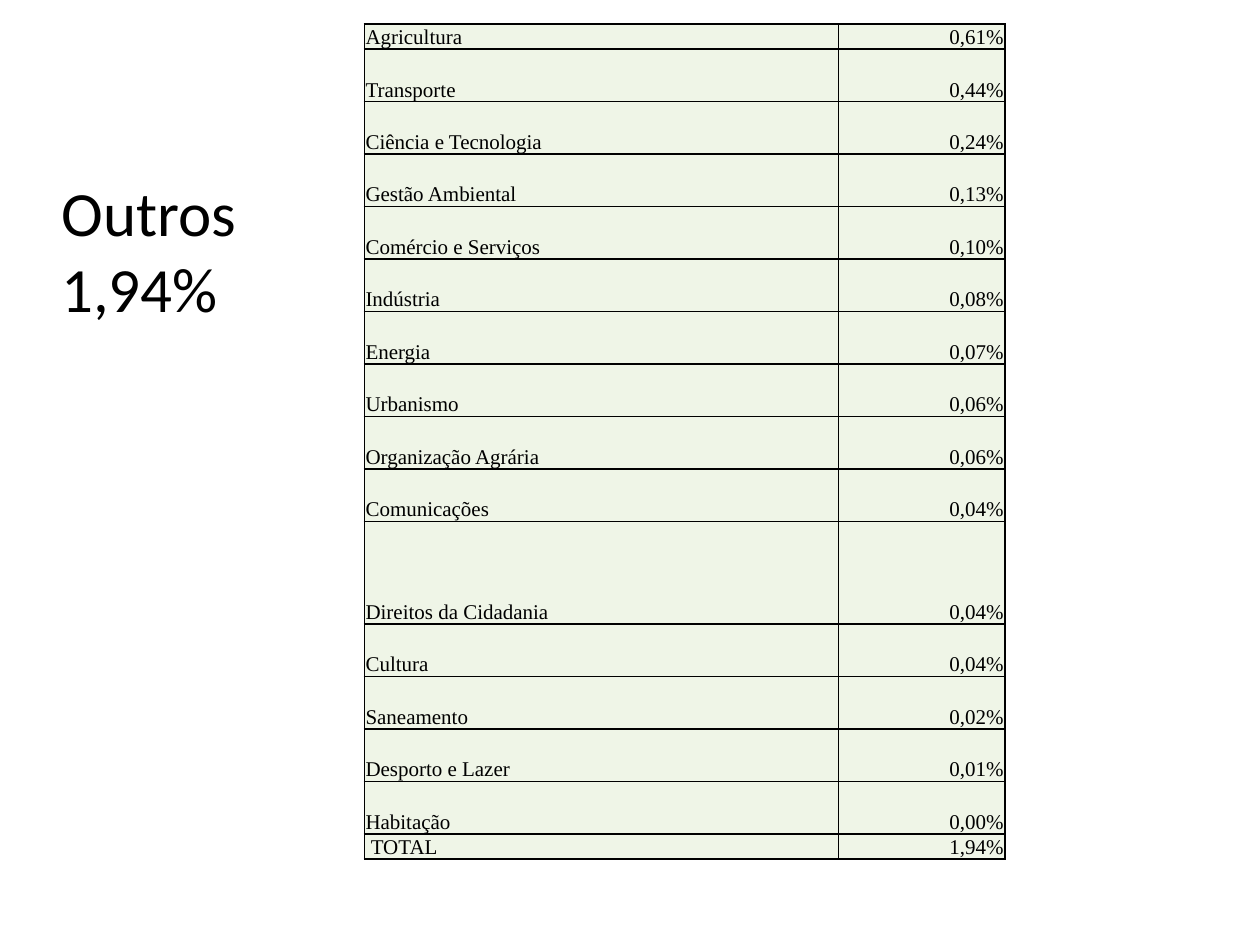
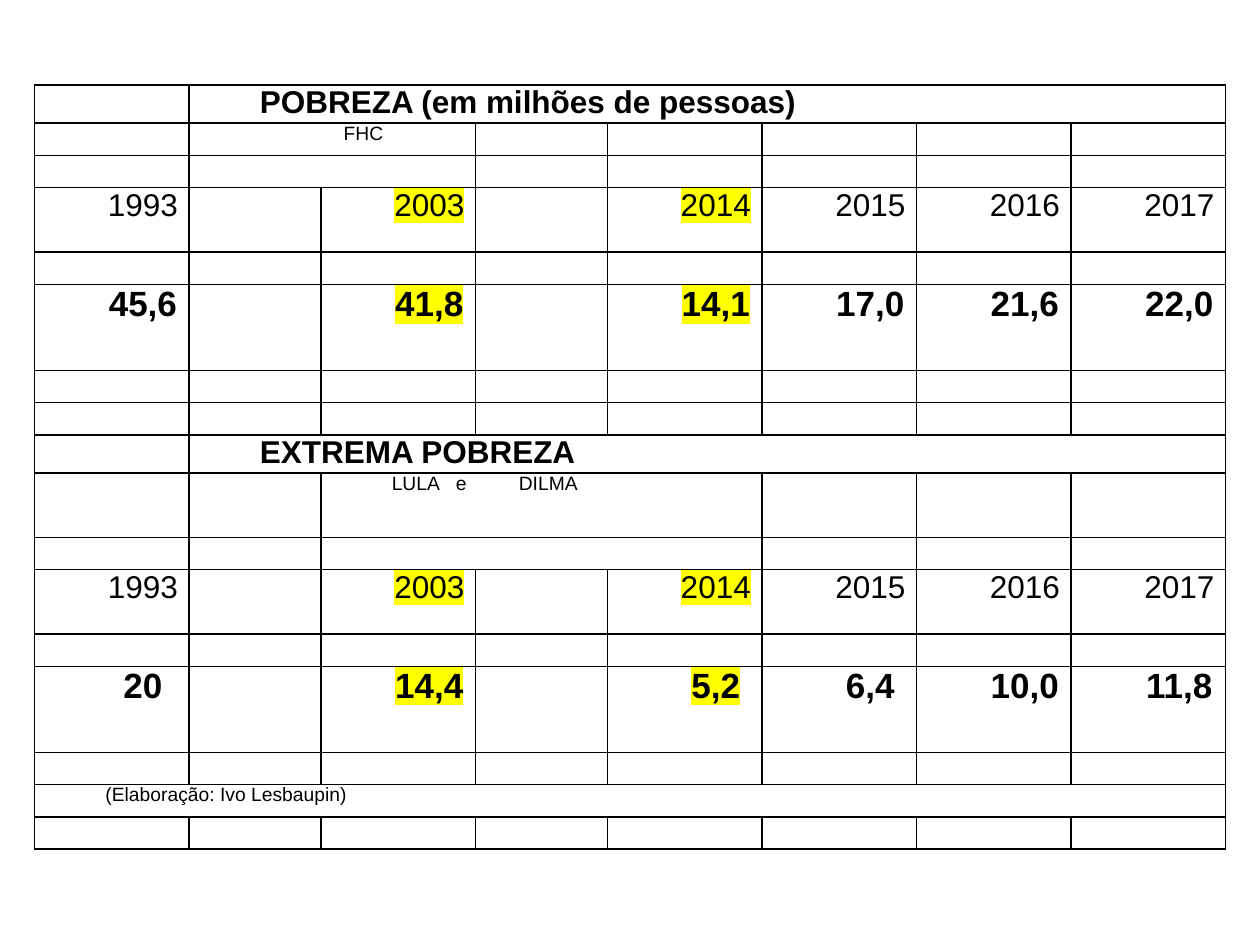
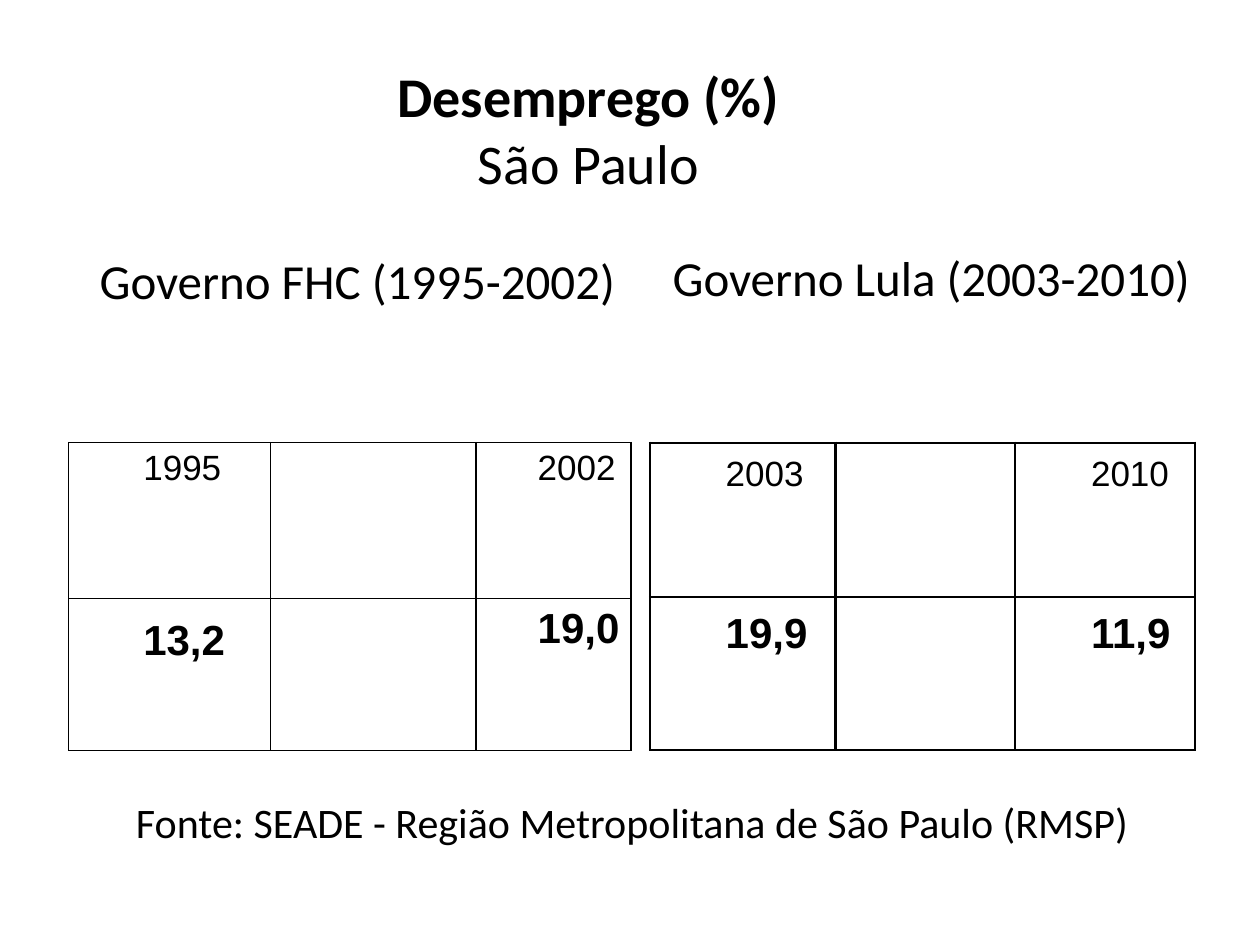
from lxml.etree import SubElement
from pptx import Presentation
from pptx.dml.color import RGBColor
from pptx.enum.text import MSO_ANCHOR as ANCHOR, PP_ALIGN as ALIGN
from pptx.oxml import parse_xml
from pptx.oxml.ns import nsdecls, qn
from pptx.util import Pt

BLACK, YELLOW, PALE_GREEN = "000000", "FFFF00", "EFF5E7"
CELL_INDENT = 35.4

OTHER_SPENDING = [
    ("Agricultura", "0,61%"), ("Transporte", "0,44%"),
    ("Ciência e Tecnologia", "0,24%"), ("Gestão Ambiental", "0,13%"),
    ("Comércio e Serviços", "0,10%"), ("Indústria", "0,08%"),
    ("Energia", "0,07%"), ("Urbanismo", "0,06%"),
    ("Organização Agrária", "0,06%"), ("Comunicações", "0,04%"),
    ("Direitos da Cidadania", "0,04%"), ("Cultura", "0,04%"),
    ("Saneamento", "0,02%"), ("Desporto e Lazer", "0,01%"),
    ("Habitação", "0,00%"), ("TOTAL", "1,94%"),
]

VALUE_COLUMNS = (0, 2, 4, 5, 6, 7)
HIGHLIGHT_COLUMNS = (2, 4)
YEARS = ("1993", "2003", "2014", "2015", "2016", "2017")
POVERTY = ("45,6", "41,8", "14,1", "17,0", "21,6", "22,0")
EXTREME_POVERTY = ("20", "14,4", "5,2", "6,4", "10,0", "11,8")


def color(value):
    return RGBColor.from_string(value)


def write(frame, text, size=18, font="Arial", bold=False, align=ALIGN.LEFT,
          indent=0, before=0, after=0, spacing=None, highlight=None, tabs=()):
    """Add one paragraph; an empty text only sets the line height."""
    para = frame.add_paragraph() if frame.text else frame.paragraphs[0]
    para.alignment = align
    para.space_before, para.space_after = Pt(before), Pt(after)
    if spacing:
        para.line_spacing = spacing
    props = para._p.get_or_add_pPr()
    props.set("marL", "0")
    props.set("indent", str(Pt(indent)))
    if tabs:
        stops = SubElement(props, qn("a:tabLst"))
        for stop in tabs:
            SubElement(stops, qn("a:tab"), pos=str(Pt(stop)), algn="l")
    if not text:
        SubElement(para._p, qn("a:endParaRPr"), sz=str(size * 100))
        return
    span = para.add_run()
    span.text = text
    span.font.size, span.font.bold = Pt(size), bold
    span.font.color.rgb = color(BLACK)
    span.font.name = font
    if highlight:
        fill = span._r.rPr.find(qn("a:solidFill"))
        fill.addnext(parse_xml(f'<a:highlight {nsdecls("a")}>'
                               f'<a:srgbClr val="{highlight}"/></a:highlight>'))


def add_text_box(page, left, top, width, height):
    box = page.shapes.add_textbox(Pt(left), Pt(top), Pt(width), Pt(height))
    box.text_frame.word_wrap = True
    return box.text_frame


def set_insets(cell, left, top):
    cell.margin_left = cell.margin_right = Pt(left)
    cell.margin_top = cell.margin_bottom = Pt(top)


def set_borders(cell, width):
    props = cell._tc.get_or_add_tcPr()
    for position, side in enumerate(("lnL", "lnR", "lnT", "lnB")):
        props.insert(position, parse_xml(
            f'<a:{side} {nsdecls("a")} w="{Pt(width)}"><a:solidFill>'
            f'<a:srgbClr val="{BLACK}"/></a:solidFill></a:{side}>'))


def add_grid(page, left, top, widths, heights, line=1, fill=None, insets=(5, 0)):
    table = page.shapes.add_table(
        len(heights), len(widths), Pt(left), Pt(top),
        Pt(sum(widths)), Pt(sum(heights))).table
    table.first_row = table.horz_banding = False
    for column, width in zip(table.columns, widths):
        column.width = Pt(width)
    for row, height in zip(table.rows, heights):
        row.height = Pt(height)
    for cell in table.iter_cells():
        if fill:
            cell.fill.solid()
            cell.fill.fore_color.rgb = color(fill)
        else:
            cell.fill.background()
        set_borders(cell, line)
        set_insets(cell, *insets)
    return table


def build_spending(page):
    low, normal, tall = 14.3, 30, 58.6
    heights = [low] + [normal] * 9 + [tall] + [normal] * 4 + [low]
    table = add_grid(page, 208.2, 13.8, (271, 95), heights,
                     fill=PALE_GREEN, insets=(0.7, 0))
    for row, entry in enumerate(OTHER_SPENDING):
        for column, text in enumerate(entry):
            cell = table.cell(row, column)
            cell.vertical_anchor = ANCHOR.BOTTOM
            cell.margin_top = Pt(0.7)
            write(cell.text_frame, text, size=12, font="Times New Roman",
                  align=ALIGN.RIGHT if column else ALIGN.LEFT,
                  indent=3 if text == "TOTAL" else 0)
    frame = add_text_box(page, 28, 95.8, 163.4, 138)
    for text in ("Outros", "1,94%"):
        write(frame, text, size=36, font="Calibri")


def build_poverty(page):
    wide, narrow = 88.3, 75.4
    low, heading, normal, tall = 18.45, 21.7, 36.9, 49.1
    widths = (wide, narrow, wide, narrow) + (wide,) * 4
    heights = (heading, low, low, normal, low, tall, low, low,
               heading, normal, low, normal, low, tall, low, low, low)
    table = add_grid(page, 19.8, 48.7, widths, heights)

    # Row, column, span, text and format of each cell that is merged
    small, title = {"size": 11}, {"size": 18, "bold": True}
    merged = [
        (0, 1, 7, "POBREZA (em milhões de pessoas)", title),
        (1, 1, 2, "FHC", {"size": 11, "align": ALIGN.CENTER}),
        (2, 1, 2, "", small),
        (8, 1, 7, "EXTREMA POBREZA", title),
        (9, 2, 3, "LULA\te\tDILMA", {"size": 11, "tabs": (86.9, 108)}),
        (10, 2, 3, "", small),
        (15, 0, 8, "(Elaboração: Ivo Lesbaupin)", small),
    ]
    content = {}
    for row, column, span, text, style in merged:
        table.cell(row, column).merge(table.cell(row, column + span - 1))
        content[row, column] = text, {"align": ALIGN.JUSTIFY, **style}

    years, numbers = {"size": 18}, {"size": 20, "bold": True}
    for row, values, style in ((3, YEARS, years), (5, POVERTY, numbers),
                               (11, YEARS, years), (13, EXTREME_POVERTY, numbers)):
        for column, text in zip(VALUE_COLUMNS, values):
            mark = YELLOW if column in HIGHLIGHT_COLUMNS else None
            content[row, column] = text, {"align": ALIGN.CENTER,
                                          "highlight": mark, **style}

    for row in range(len(heights)):
        for column in range(len(widths)):
            text, style = content.get((row, column), ("", small))
            write(table.cell(row, column).text_frame, text,
                  indent=CELL_INDENT, before=6, **style)


def fill_period(table, column, year, rate, **style):
    write(table.cell(0, column).text_frame, year, size=20,
          indent=CELL_INDENT, **style)
    write(table.cell(1, column).text_frame, rate, size=24, bold=True,
          indent=CELL_INDENT, **style)


def build_unemployment(page):
    fhc = add_grid(page, 39.3, 253, (115.4, 117.2, 88.6), (89.1, 86.9),
                   insets=(7.2, 3.6))
    fill_period(fhc, 0, "1995", "13,2", before=6)
    fhc.cell(1, 0).margin_top = Pt(10.8)
    for row in range(2):
        set_insets(fhc.cell(row, 2), 0, 0)
    fill_period(fhc, 2, "2002", "19,0", after=10, spacing=1.15)

    lula = add_grid(page, 371.4, 253, (106, 102.8, 102.8), (88, 87.4),
                    line=1.5, insets=(7.9, 3.6))
    for column, year, rate in ((0, "2003", "19,9"), (2, "2010", "11,9")):
        fill_period(lula, column, year, rate, before=6, after=10, spacing=1.15)

    title = add_text_box(page, 156.2, 31.7, 360, 85)
    write(title, "Desemprego (%)", size=32, font="Calibri", bold=True,
          align=ALIGN.CENTER)
    write(title, "São Paulo", size=32, font="Calibri", align=ALIGN.CENTER)

    for text, size, align, box in (
            ("Governo Lula (2003-2010)", 28, ALIGN.LEFT, (377.3, 138, 317.5, 51)),
            ("Governo FHC (1995-2002)", 28, ALIGN.CENTER, (42.5, 139.7, 323.3, 51)),
            ("Fonte: SEADE - Região Metropolitana de São Paulo (RMSP)", 24,
             ALIGN.LEFT, (70.6, 451.4, 612, 49))):
        write(add_text_box(page, *box), text, size=size, font="Calibri", align=align)


def main():
    deck = Presentation()
    deck.slide_width, deck.slide_height = Pt(720), Pt(540)
    for build in (build_spending, build_poverty, build_unemployment):
        build(deck.slides.add_slide(deck.slide_layouts[6]))
    deck.save("out.pptx")


if __name__ == "__main__":
    main()
